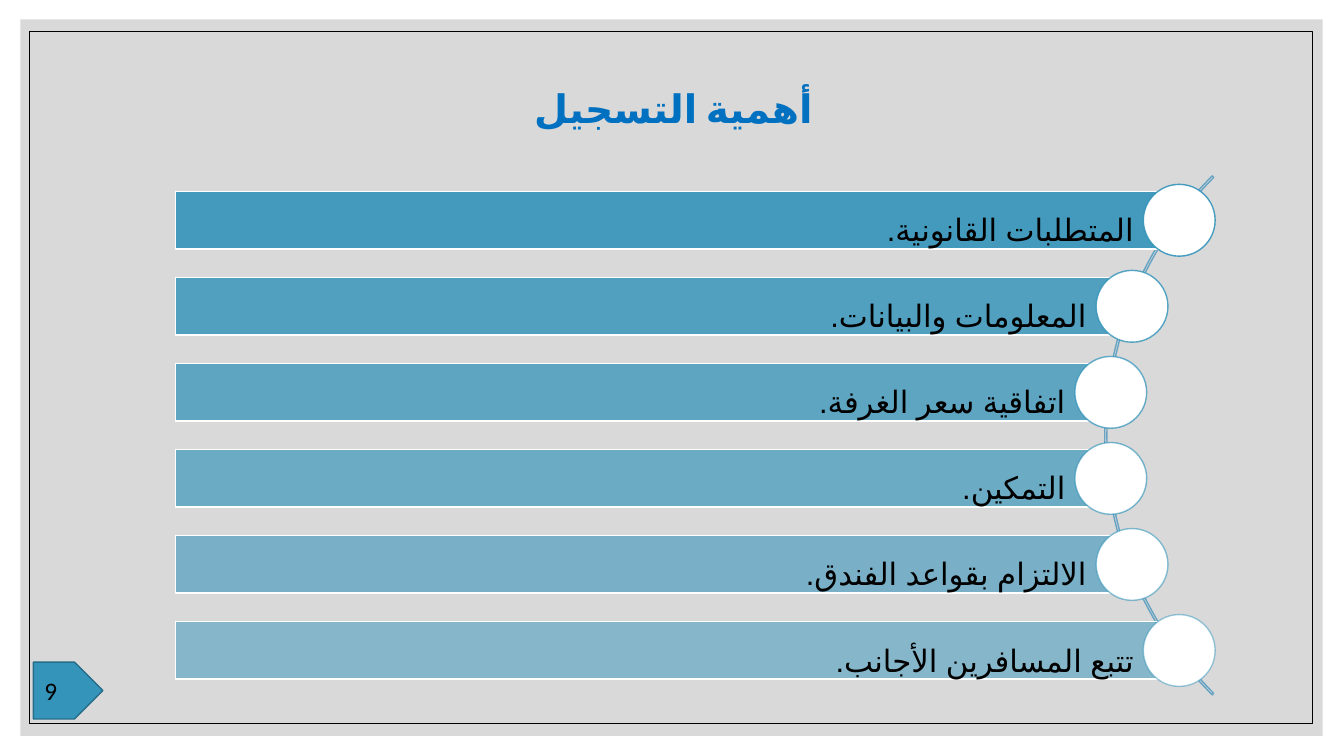
import math
from dataclasses import dataclass

import lxml.etree
import pptx
import pptx.dml.color
import pptx.enum.lang
import pptx.enum.shapes
import pptx.enum.text
import pptx.oxml.ns
import pptx.util

Pt = pptx.util.Pt
SHAPE = pptx.enum.shapes.MSO_SHAPE
ALIGN = pptx.enum.text.PP_ALIGN
MIDDLE = pptx.enum.text.MSO_ANCHOR.MIDDLE


@dataclass(frozen=True)
class Theme:
    panel: str = "D9D9D9"
    ink: str = "000000"
    white: str = "FFFFFF"
    accent: str = "3494BA"
    accent_dark: str = "266D8A"
    arc: str = "67A3C2"
    heading: str = "0070C0"
    heading_font: str = "Calibri"
    body_font: str = "Arial"
    heading_size: int = 28
    body_size: int = 22
    number_size: int = 18


class SlideBuilder:
    def __init__(self, page, theme):
        self.page = page
        self.theme = theme

    def paint(self, target, color, opacity=100):
        """Give a fill a solid colour with an opacity in percent."""
        target.solid()
        target.fore_color.rgb = pptx.dml.color.RGBColor.from_string(color)
        if opacity < 100:
            color_node = target._xPr.find(".//" + pptx.oxml.ns.qn("a:srgbClr"))
            alpha = lxml.etree.SubElement(color_node, pptx.oxml.ns.qn("a:alpha"))
            alpha.set("val", str(opacity * 1000))

    def shape(self, kind, box, fill=None, line=None, fill_opacity=100, line_opacity=100):
        item = self.page.shapes.add_shape(kind, *(Pt(length) for length in box))
        item.shadow.inherit = False
        if fill:
            self.paint(item.fill, fill, fill_opacity)
        else:
            item.fill.background()
        if line:
            item.line.width = Pt(1)
            self.paint(item.line.fill, line, line_opacity)
        else:
            item.line.fill.background()
        return item

    def text(self, item, words, font, size, color, align, bold=False, rtl=True, insets=(4.3, 4.3, 32.4, 4.3)):
        frame = item.text_frame
        frame.text = words
        frame.word_wrap = True
        frame.auto_size = pptx.enum.text.MSO_AUTO_SIZE.NONE
        frame.vertical_anchor = MIDDLE
        frame.margin_left, frame.margin_top, frame.margin_right, frame.margin_bottom = map(Pt, insets)
        para = frame.paragraphs[0]
        para.alignment = align
        span = para.runs[0]
        span.font.name = font
        span.font.size = Pt(size)
        span.font.bold = bold
        span.font.color.rgb = pptx.dml.color.RGBColor.from_string(color)
        if rtl:
            para.line_spacing = 1.5
            para._p.get_or_add_pPr().set("rtl", "1")
            span.font.language_id = pptx.enum.lang.MSO_LANGUAGE_ID.ARABIC
            complex_font = lxml.etree.SubElement(span._r.get_or_add_rPr(), pptx.oxml.ns.qn("a:cs"))
            complex_font.set("typeface", font)

    def frame(self):
        self.shape(SHAPE.RECTANGLE, (14.6, 13.8, 930.2, 511.9), fill=self.theme.panel)
        self.shape(SHAPE.RECTANGLE, (20.9, 22.4, 916.6, 494.6), line=self.theme.ink)

    def page_number(self, number):
        theme = self.theme
        tag = self.shape(SHAPE.PENTAGON, (23.8, 473, 49.7, 40.6), theme.accent, theme.accent_dark)
        self.text(tag, number, theme.heading_font, theme.number_size, theme.ink,
                  ALIGN.LEFT, rtl=False, insets=(7.9, 3.6, 0, 3.6))

    def title(self, words):
        theme = self.theme
        title = self.page.shapes.title
        title.left, title.top, title.width, title.height = map(Pt, (218.2, 33.8, 525.6, 69.8))
        self.text(title, words, theme.heading_font, theme.heading_size, theme.heading,
                  ALIGN.CENTER, bold=True, insets=(7.2, 3.6, 7.2, 3.6))
        # The title placeholder stacks above the panel.
        self.page.shapes._spTree.append(title._element)

    def arc_list(self, items):
        """Draw bars that end in circles strung along an arc."""
        theme = self.theme
        center_x, center_y, radius = 1051.2, 311, 262.1
        circles_x, circles_radius = 1049.6, 258
        bar_left, bar_height, pitch, diameter = 125.3, 41, 61.46, 51.3
        arc = self.shape(SHAPE.BLOCK_ARC, (center_x - radius, center_y - radius, 2 * radius, 2 * radius),
                         line=theme.arc)
        arc.adjustments[0], arc.adjustments[1], arc.adjustments[2] = 81, 135, 0.003
        for index, words in enumerate(items):
            offset = (index - (len(items) - 1) / 2) * pitch
            middle = center_y + offset
            circle_x = circles_x - math.sqrt(circles_radius ** 2 - offset ** 2)
            opacity = 90 - 8 * index
            bar = self.shape(SHAPE.RECTANGLE,
                             (bar_left, middle - bar_height / 2, circle_x - bar_left, bar_height),
                             theme.accent, theme.white, fill_opacity=opacity)
            self.text(bar, words, theme.body_font, theme.body_size, theme.ink, ALIGN.JUSTIFY)
            self.shape(SHAPE.OVAL,
                       (circle_x - diameter / 2, middle - diameter / 2, diameter, diameter),
                       theme.white, theme.accent, line_opacity=opacity)


def main():
    deck = pptx.Presentation()
    deck.slide_width, deck.slide_height = Pt(960), Pt(540)
    builder = SlideBuilder(deck.slides.add_slide(deck.slide_layouts[5]), Theme())
    builder.frame()
    builder.page_number("9")
    builder.title("أهمية التسجيل")
    builder.arc_list([
        "المتطلبات القانونية.",
        "المعلومات والبيانات.",
        "اتفاقية سعر الغرفة.",
        "التمكين.",
        "الالتزام بقواعد الفندق.",
        "تتبع المسافرين الأجانب.",
    ])
    deck.save("out.pptx")


if __name__ == "__main__":
    main()
